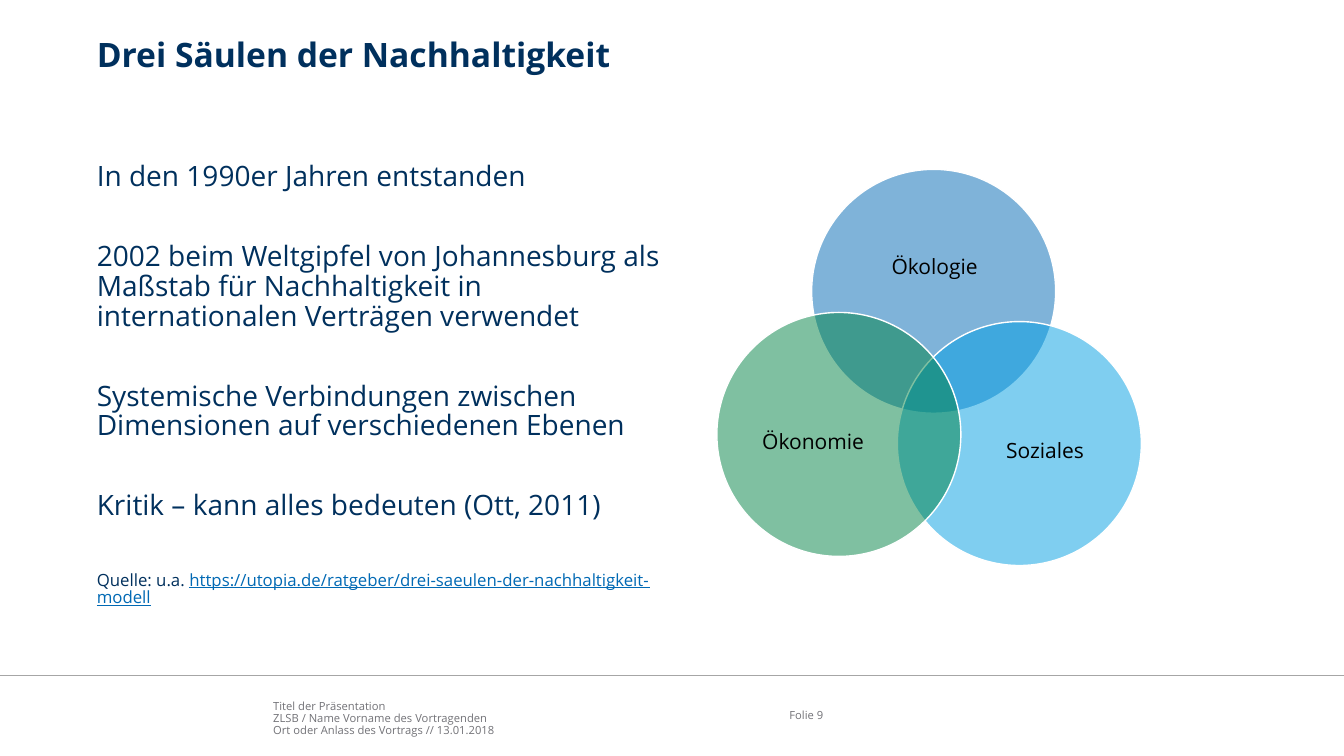
from lxml.etree import SubElement
from pptx import Presentation
from pptx.dml.color import RGBColor
from pptx.enum.shapes import MSO_CONNECTOR, MSO_SHAPE
from pptx.enum.text import MSO_ANCHOR, MSO_AUTO_SIZE, PP_ALIGN
from pptx.oxml.ns import qn
from pptx.util import Inches, Pt

NAVY = RGBColor(0x00, 0x30, 0x5D)
BLUE = RGBColor(0x00, 0x69, 0xB4)
CYAN = RGBColor(0x00, 0x9F, 0xE3)
GREEN = RGBColor(0x00, 0x82, 0x44)
GREY = RGBColor(0x72, 0x72, 0x77)
RULE_GREY = RGBColor(0xA6, 0xA6, 0xA6)
WHITE = RGBColor(0xFF, 0xFF, 0xFF)
BLACK = RGBColor(0x00, 0x00, 0x00)
FONT = "Open Sans"

TITLE = "Drei Säulen der Nachhaltigkeit"
POINTS = [
    "In den 1990er Jahren entstanden",
    "2002 beim Weltgipfel von Johannesburg als Maßstab für Nachhaltigkeit "
    "in internationalen Verträgen verwendet",
    "Systemische Verbindungen zwischen Dimensionen auf verschiedenen Ebenen",
    "Kritik – kann alles bedeuten (Ott, 2011)",
]
SOURCE = "Quelle: u.a. "
SOURCE_URL = "https://utopia.de/ratgeber/drei-saeulen-der-nachhaltigkeit-modell"
FOOTER = [
    "Titel der Präsentation",
    "ZLSB / Name Vorname des Vortragenden",
    "Ort oder Anlass des Vortrags // 13.01.2018",
]
PAGE_NUMBER = "Folie 9"

# label, colour, circle left and top, label area (left, top, width, height)
DIAMETER = 2.42
PILLARS = [
    ("Ökologie", BLUE, 8.05, 1.68, (8.64, 2.27, 1.26, 0.77)),
    ("Soziales", CYAN, 8.9, 3.19, (9.85, 4.01, 1.03, 0.94)),
    ("Ökonomie", GREEN, 7.11, 3.1, (7.55, 3.92, 1.03, 0.94)),
]


def place(box, left, top, width, height):
    box.left, box.top = Inches(left), Inches(top)
    box.width, box.height = Inches(width), Inches(height)


def add_span(para, text, size, color, underline=None):
    span = para.add_run()
    span.text = text
    span.font.name, span.font.size = FONT, Pt(size)
    span.font.color.rgb = color
    span.font.underline = underline
    return span


def write(box, lines, size, color, bold=False, align=PP_ALIGN.LEFT,
          anchor=MSO_ANCHOR.TOP, spacing=0.88, gap=0, bullets_off=False):
    """Fill a box with one paragraph per line and return the last paragraph."""
    frame = box.text_frame
    frame.word_wrap = True
    frame.auto_size = MSO_AUTO_SIZE.NONE
    frame.vertical_anchor = anchor
    frame.margin_left = frame.margin_right = 0
    frame.margin_top = frame.margin_bottom = 0
    for index, line in enumerate(lines):
        para = frame.add_paragraph() if index else frame.paragraphs[0]
        para.alignment = align
        para.line_spacing = spacing
        para.space_before = Pt(gap if index else 0)
        para.space_after = Pt(0)
        if bullets_off:
            properties = para._p.get_or_add_pPr()
            properties.set("marL", "0")
            properties.set("indent", "0")
            SubElement(properties, qn("a:buNone"))
        add_span(para, line, size, color).font.bold = bold
    return para


def add_label(page, area, lines, size, color, **text_format):
    box = page.shapes.add_textbox(0, 0, 0, 0)
    place(box, *area)
    write(box, lines, size, color, **text_format)


def add_circle(page, left, top, color):
    circle = page.shapes.add_shape(
        MSO_SHAPE.OVAL, Inches(left), Inches(top), Inches(DIAMETER), Inches(DIAMETER))
    circle.shadow.inherit = False
    circle.fill.solid()
    circle.fill.fore_color.rgb = color
    fill_color = circle._element.spPr.find(qn("a:solidFill"))[0]
    SubElement(fill_color, qn("a:alpha"), val="50000")
    circle.line.color.rgb = WHITE
    circle.line.width = Pt(1)


def main():
    deck = Presentation()
    deck.slide_width, deck.slide_height = Inches(13.33), Inches(7.5)
    page = deck.slides.add_slide(deck.slide_layouts[1])

    rule = page.shapes.add_connector(
        MSO_CONNECTOR.STRAIGHT, 0, Inches(6.7), deck.slide_width, Inches(6.7))
    rule.line.color.rgb = RULE_GREY
    rule.line.width = Pt(1)
    SubElement(rule._element.spPr, qn("a:effectLst"))
    add_label(page, (2.71, 6.91, 4.9, 0.4), FOOTER, 8, GREY, anchor=MSO_ANCHOR.BOTTOM)
    add_label(page, (7.83, 6.9, 0.77, 0.4), [PAGE_NUMBER], 8, GREY,
              anchor=MSO_ANCHOR.MIDDLE)

    title, body = page.placeholders
    place(title, 0.96, 0.38, 11.57, 0.75)
    write(title, [TITLE], 24, NAVY, bold=True, spacing=0.9)

    place(body, 0.96, 1.62, 5.67, 4.35)
    source = write(body, POINTS + [SOURCE], 20, NAVY, gap=36, bullets_off=True)
    source.runs[0].font.size = Pt(12)
    add_span(source, SOURCE_URL, 12, BLUE, underline=True)

    for label, color, left, top, area in PILLARS:
        add_circle(page, left, top, color)
        add_label(page, area, [label], 15, BLACK, align=PP_ALIGN.CENTER,
                  anchor=MSO_ANCHOR.MIDDLE, spacing=0.9)

    deck.save("out.pptx")


if __name__ == "__main__":
    main()
